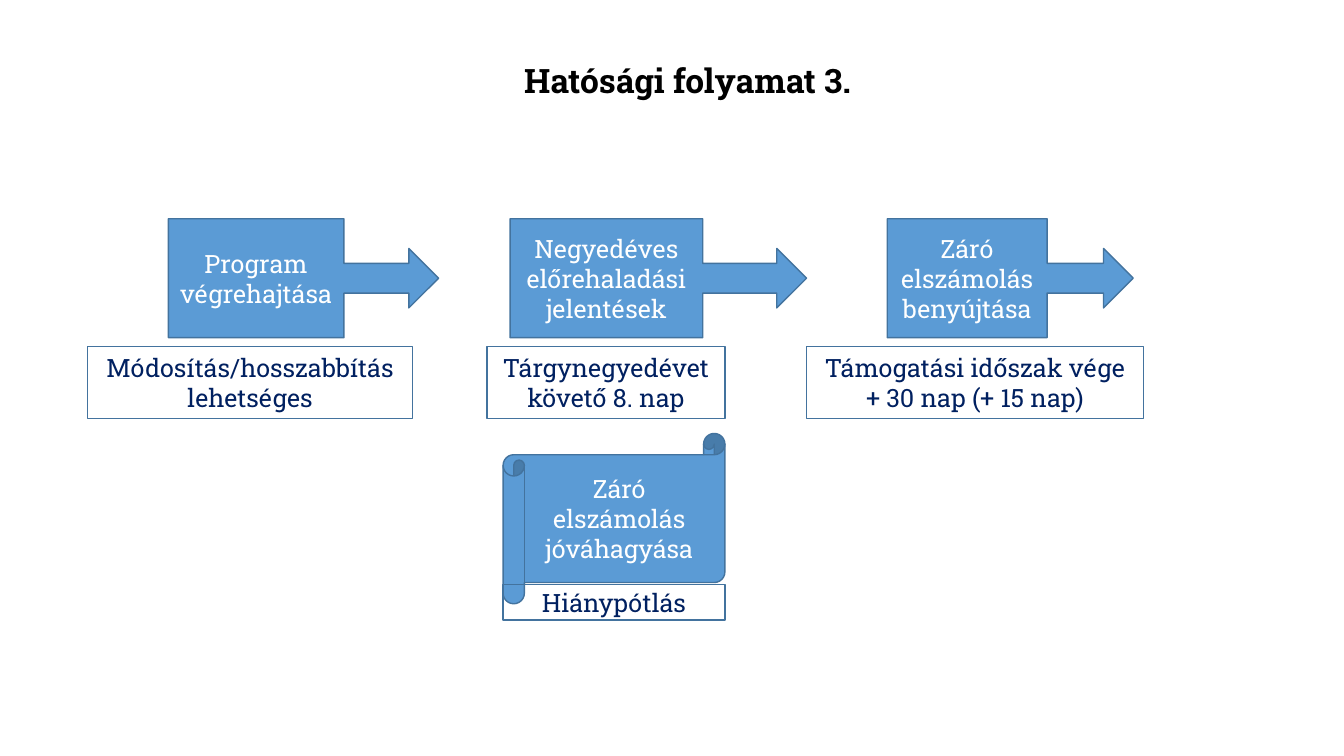
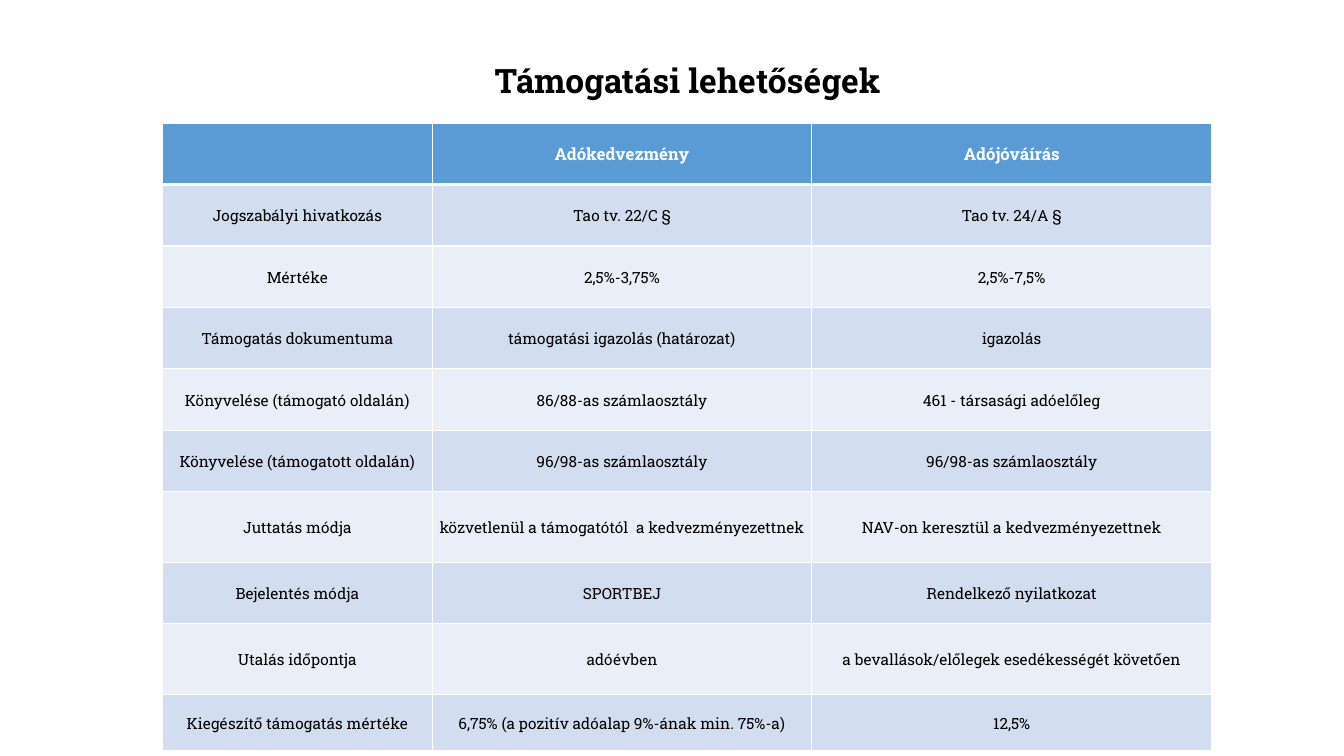
from lxml import etree
from pptx import Presentation
from pptx.dml.color import RGBColor
from pptx.enum.shapes import MSO_SHAPE
from pptx.enum.text import MSO_ANCHOR, MSO_AUTO_SIZE, PP_ALIGN
from pptx.oxml.ns import qn
from pptx.util import Inches, Pt

CALLOUT = MSO_SHAPE.RIGHT_ARROW_CALLOUT
SCROLL = MSO_SHAPE.HORIZONTAL_SCROLL
RECTANGLE = MSO_SHAPE.RECTANGLE
CENTER = PP_ALIGN.CENTER
TOP, MIDDLE = MSO_ANCHOR.TOP, MSO_ANCHOR.MIDDLE
NO_AUTOFIT = MSO_AUTO_SIZE.NONE

FONT = "Roboto Slab"
BLACK, WHITE, NAVY = "000000", "FFFFFF", "002060"
BLUE, OUTLINE = "5B9BD5", "43739E"
BANDS = ["D2DEEF", "EAEFF7"]
TITLE_ONLY = 5
TITLE_BOX = (1.55, 0.59, 10.54, 0.63)

# Process steps: callout left and width, text lines, note left and width, note
STEP_TOP, STEP_HEIGHT = 2.17, 1.18
NOTE_TOP, NOTE_HEIGHT = 3.44, 0.71
STEPS = [
    (1.67, 2.68, ["Program", "végrehajtása"],
     0.87, 3.22, "Módosítás/hosszabbítás lehetséges"),
    (5.06, 2.94, ["Negyedéves előrehaladási jelentések"],
     4.83, 2.36, "Tárgynegyedévet követő 8. nap"),
    (8.8, 2.44, ["Záró elszámolás benyújtása"],
     8, 3.34, "Támogatási időszak vége + 30 nap (+ 15 nap)"),
]

TABLE_BOX = (1.61, 1.22, 10.42, 6.25)
COLUMN_WIDTHS = [2.68, 3.76, 3.97]
ROW_HEIGHTS = [0.61] * 6 + [0.7, 0.61, 0.7, 0.56]
SUPPORT_ROWS = [
    ("", "Adókedvezmény", "Adójóváírás"),
    ("Jogszabályi hivatkozás", "Tao tv. 22/C §", "Tao tv. 24/A §"),
    ("Mértéke", "2,5%-3,75%", "2,5%-7,5%"),
    ("Támogatás dokumentuma", "támogatási igazolás (határozat)", "igazolás"),
    ("Könyvelése (támogató oldalán)", "86/88-as számlaosztály",
     "461 - társasági adóelőleg"),
    ("Könyvelése (támogatott oldalán)", "96/98-as számlaosztály",
     "96/98-as számlaosztály"),
    ("Juttatás módja", "közvetlenül a támogatótól  a kedvezményezettnek",
     "NAV-on keresztül a kedvezményezettnek"),
    ("Bejelentés módja", "SPORTBEJ", "Rendelkező nyilatkozat"),
    ("Utalás időpontja", "adóévben",
     "a bevallások/előlegek esedékességét követően"),
    ("Kiegészítő támogatás mértéke",
     "6,75% (a pozitív adóalap 9%-ának min. 75%-a)", "12,5%"),
]


def color(value):
    return RGBColor.from_string(value)


def write_lines(frame, lines, size, text_color, bold=False):
    """Write each line as a centred paragraph."""
    for index, line in enumerate(lines):
        paragraph = frame.paragraphs[0] if index == 0 else frame.add_paragraph()
        paragraph.alignment = CENTER
        run = paragraph.add_run()
        run.text = line
        run.font.name = FONT
        run.font.size = Pt(size)
        run.font.bold = bold
        run.font.color.rgb = color(text_color)


def add_titled_slide(presentation, text):
    slide = presentation.slides.add_slide(presentation.slide_layouts[TITLE_ONLY])
    title = slide.shapes.title
    title.left, title.top, title.width, title.height = map(Inches, TITLE_BOX)
    frame = title.text_frame
    frame.word_wrap = True
    frame.auto_size = NO_AUTOFIT
    frame.vertical_anchor = TOP
    write_lines(frame, [text], 24, BLACK, bold=True)
    frame.paragraphs[0].line_spacing = 0.9
    return slide


def add_box(slide, kind, box, lines, fill=None):
    """Add an outlined shape: white text on a fill, or navy text without one."""
    shape = slide.shapes.add_shape(kind, *map(Inches, box))
    shape.shadow.inherit = False
    if fill:
        shape.fill.solid()
        shape.fill.fore_color.rgb = color(fill)
    else:
        shape.fill.background()
    shape.line.color.rgb = color(OUTLINE)
    shape.line.width = Pt(1)
    frame = shape.text_frame
    frame.word_wrap = True
    frame.vertical_anchor = MIDDLE
    write_lines(frame, lines, 18, WHITE if fill else NAVY)


def add_step(slide, left, width, lines, note_left, note_width, note):
    add_box(slide, CALLOUT, (left, STEP_TOP, width, STEP_HEIGHT), lines, BLUE)
    add_box(slide, RECTANGLE, (note_left, NOTE_TOP, note_width, NOTE_HEIGHT), [note])


def add_approval(slide, left, top, width, height):
    """Add the closing scroll with its note overlapping the lower edge."""
    add_box(slide, SCROLL, (left, top, width, height),
            ["Záró elszámolás jóváhagyása"], BLUE)
    add_box(slide, RECTANGLE, (left, top + 1.5, width, 0.35), ["Hiánypótlás"])


def set_borders(cell, bottom_width):
    properties = cell._tc.get_or_add_tcPr()
    for side, width in (("L", 1), ("R", 1), ("T", 1), ("B", bottom_width)):
        line = etree.SubElement(properties, qn("a:ln" + side), w=str(Pt(width)))
        fill = etree.SubElement(line, qn("a:solidFill"))
        etree.SubElement(fill, qn("a:srgbClr"), val=WHITE)


def format_cell(cell, text, row_index):
    header = row_index == 0
    set_borders(cell, 3 if header else 1)
    cell.fill.solid()
    cell.fill.fore_color.rgb = color(BLUE if header else BANDS[(row_index - 1) % 2])
    cell.vertical_anchor = MIDDLE
    cell.margin_left = cell.margin_top = cell.margin_right = Inches(0.01)
    cell.margin_bottom = 0
    if text:
        write_lines(cell.text_frame, [text], 12 if header else 11,
                    WHITE if header else BLACK, bold=header)


def add_support_table(slide, box):
    table = slide.shapes.add_table(
        len(SUPPORT_ROWS), len(COLUMN_WIDTHS), *map(Inches, box)).table
    table.horz_banding = False
    for column, width in zip(table.columns, COLUMN_WIDTHS):
        column.width = Inches(width)
    for row_index, texts in enumerate(SUPPORT_ROWS):
        row = table.rows[row_index]
        row.height = Inches(ROW_HEIGHTS[row_index])
        for cell, text in zip(row.cells, texts):
            format_cell(cell, text, row_index)


def main():
    presentation = Presentation()
    presentation.slide_width = Inches(13.33)
    presentation.slide_height = Inches(7.5)

    # Process slide
    slide = add_titled_slide(presentation, "Hatósági folyamat 3.")
    for step in STEPS:
        add_step(slide, *step)
    add_approval(slide, 4.99, 4.3, 2.2, 1.69)

    # Comparison slide
    slide = add_titled_slide(presentation, "Támogatási lehetőségek")
    add_support_table(slide, TABLE_BOX)

    presentation.save("out.pptx")


if __name__ == "__main__":
    main()
